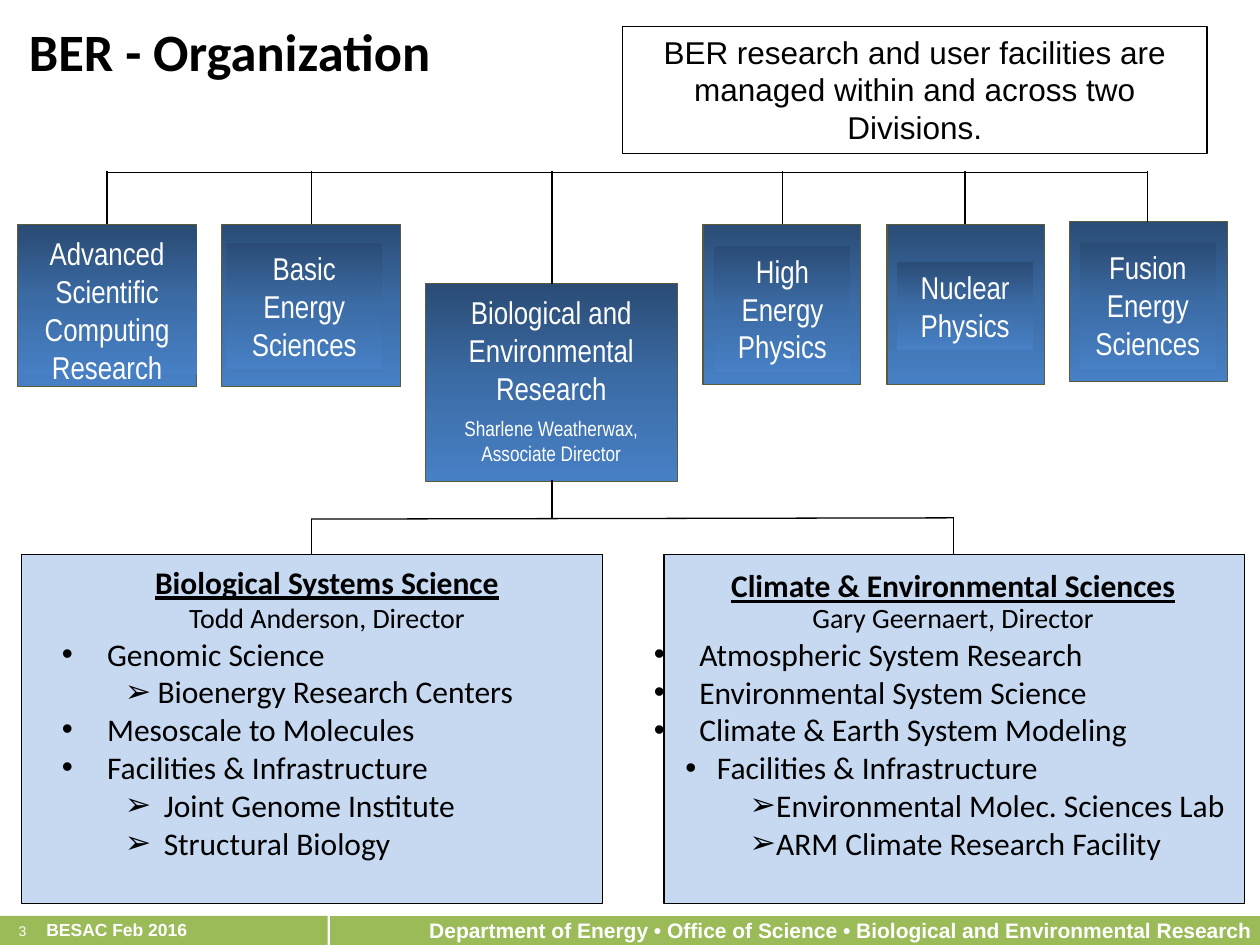
import copy

import pptx
import pptx.util
import pptx.dml.color
import pptx.enum.shapes
import pptx.enum.text
import pptx.oxml
import pptx.oxml.ns

Inches = pptx.util.Inches
Pt = pptx.util.Pt
RGBColor = pptx.dml.color.RGBColor
Align = pptx.enum.text.PP_ALIGN
Anchor = pptx.enum.text.MSO_ANCHOR
Fit = pptx.enum.text.MSO_AUTO_SIZE
qn = pptx.oxml.ns.qn

BLACK = RGBColor(0, 0, 0)
WHITE = RGBColor(255, 255, 255)
GREEN = RGBColor(0x9B, 0xBB, 0x59)
PALE = RGBColor(0xC6, 0xD9, 0xF1)
OLIVE = RGBColor(0x5A, 0x5B, 0x39)
DEEP = RGBColor(0x2A, 0x4C, 0x75)
MID = RGBColor(0x3C, 0x6C, 0xA6)
LIGHT = RGBColor(0x47, 0x80, 0xC5)
SHADE = (DEEP, MID, LIGHT)


class Chart:
    def __init__(self, slide):
        self.slide = slide
        self.thin = Pt(0.75)

    def box(self, at, fill=None, edge=None, host=None):
        shapes = (host or self.slide).shapes
        shape = shapes.add_shape(pptx.enum.shapes.MSO_SHAPE.RECTANGLE, *map(Inches, at))
        shape.shadow.inherit = False
        if fill is None:
            shape.fill.background()
        elif fill is SHADE:
            self.shade(shape)
        else:
            shape.fill.solid()
            shape.fill.fore_color.rgb = fill
        if edge is None:
            shape.line.fill.background()
        else:
            shape.line.color.rgb = edge
            shape.line.width = self.thin
        return shape

    def shade(self, shape):
        shape.fill.gradient()
        shape.fill.gradient_angle = 270
        stops = shape.element.spPr.find(qn("a:gradFill")).find(qn("a:gsLst"))
        stops.insert(1, copy.deepcopy(stops[0]))
        for stop, tint, place in zip(shape.fill.gradient_stops, SHADE, (0, 0.5, 1)):
            stop.color.rgb = tint
            stop.position = place

    def label(self, at):
        return self.slide.shapes.add_textbox(*map(Inches, at))

    def frame(self, shape, anchor=Anchor.TOP, fit=Fit.SHAPE_TO_FIT_TEXT, side=0.1):
        frame = shape.text_frame
        frame.word_wrap = True
        frame.auto_size = fit
        frame.vertical_anchor = anchor
        frame.margin_left = frame.margin_right = Inches(side)
        return frame

    def put(self, para, text, size, face, color=BLACK, align=Align.LEFT,
            bold=False, under=False, space=None):
        para.text = text
        para.alignment = align
        if space:
            para.line_spacing = space
        for run in para.runs:
            self.style(run, size, face, color, bold, under)

    def style(self, run, size, face, color, bold=False, under=False):
        font = run.font
        font.size = Pt(size)
        font.name = face
        font.color.rgb = color
        font.bold = bold
        font.underline = under

    def indent(self, para, left, hang, mark=None):
        props = para._p.get_or_add_pPr()
        props.set("marL", str(Inches(left)))
        props.set("indent", str(-Inches(hang)))
        if mark:
            space = pptx.oxml.ns.nsdecls("a")
            face = pptx.oxml.parse_xml(f'<a:buFont {space} typeface="Arial"/>')
            sign = pptx.oxml.parse_xml(f'<a:buChar {space} char="{mark}"/>')
            props.extend((face, sign))

    def line(self, x1, y1, x2, y2):
        kind = pptx.enum.shapes.MSO_CONNECTOR.STRAIGHT
        line = self.slide.shapes.add_connector(kind, *map(Inches, (x1, y1, x2, y2)))
        line.line.color.rgb = BLACK
        line.line.width = self.thin
        line.element.spPr.append(
            pptx.oxml.parse_xml(f'<a:effectLst {pptx.oxml.ns.nsdecls("a")}/>'))

    def title(self, at, text):
        shape = self.slide.shapes.title
        shape.left, shape.top, shape.width, shape.height = map(Inches, at)
        frame = self.frame(shape, fit=Fit.NONE)
        self.put(frame.paragraphs[0], text, 30, "Calibri", bold=True, space=0.9)

    def office(self, name, outer, inner):
        group = self.slide.shapes.add_group_shape()
        self.box(outer, SHADE, OLIVE, group)
        frame = self.frame(self.box(inner, SHADE, host=group))
        self.put(frame.paragraphs[0], name, 18, "Arial Narrow", WHITE, Align.CENTER)

    def branch(self, at, name, head, rows, space=None):
        frame = self.frame(self.label(at), side=0)
        self.put(frame.paragraphs[0], name, 18, "Calibri", align=Align.CENTER,
                 bold=True, under=True, space=space)
        self.put(frame.add_paragraph(), head, 16, "Calibri", align=Align.CENTER, space=space)
        for text, mark, left, hang in rows:
            para = frame.add_paragraph()
            self.indent(para, left, hang, mark)
            self.put(para, text, 18, "Calibri")

    def foot(self):
        bar = self.box((2.62, 7.27, 7.42, 0.25), GREEN)
        frame = self.frame(bar, Anchor.MIDDLE, Fit.NONE)
        self.put(frame.paragraphs[0],
                 "Department of Energy • Office of Science • "
                 "Biological and Environmental Research",
                 12, "Arial", WHITE, Align.RIGHT, bold=True, space=0.9)
        self.box((-0.01, 7.27, 2.61, 0.24), GREEN)
        frame = self.frame(self.label((0.05, 7.26, 2.62, 0.29)), fit=Fit.NONE)
        para = frame.paragraphs[0]
        self.indent(para, 0.22, 0.22)
        self.put(para, "3\t", 8, "Arial", WHITE, space=0.9)
        run = para.add_run()
        run.text = "BESAC Feb 2016"
        self.style(run, 10, "Arial", WHITE, bold=True)


def main():
    deck = pptx.Presentation()
    deck.slide_width, deck.slide_height = Inches(10), Inches(7.5)
    chart = Chart(deck.slides.add_slide(deck.slide_layouts[5]))

    chart.foot()
    chart.title((0.13, 0.16, 4.56, 0.56), "BER - Organization")
    for left in (5.27, 0.17):
        chart.box((left, 4.4, 4.61, 2.77), PALE, BLACK)

    offices = (
        ("Advanced Scientific Computing Research", (0.14, 1.78, 1.42, 1.29), (0.14, 1.81, 1.42, 1.17)),
        ("Basic Energy Sciences", (1.76, 1.78, 1.42, 1.29), (1.8, 1.93, 1.23, 1)),
        ("High Energy Physics", (5.58, 1.78, 1.25, 1.27), (5.67, 1.95, 1.08, 1)),
        ("Nuclear Physics", (7.04, 1.78, 1.25, 1.27), (7.12, 2.08, 1.08, 0.7)),
        ("Fusion Energy Sciences", (8.49, 1.76, 1.25, 1.27), (8.57, 1.92, 1.08, 1.01)),
    )
    for office in offices:
        chart.office(*office)

    chart.box((3.38, 2.25, 2, 1.57), SHADE, OLIVE)
    frame = chart.frame(chart.label((3.47, 2.28, 1.81, 1.51)))
    chart.put(frame.paragraphs[0], "Biological and Environmental Research",
              18, "Arial Narrow", WHITE, Align.CENTER)
    para = frame.add_paragraph()
    chart.put(para, "Sharlene Weatherwax, Associate Director",
              12, "Arial Narrow", WHITE, Align.CENTER)
    para.space_before = Pt(5)

    main_row = ("•", 0.36, 0.36)
    first = ("➢", 0.76, 0.26)
    sub = ("➢", 0.81, 0.31)
    inner = ("➢", 0.97, 0.21)
    chart.branch((0.49, 4.42, 4.21, 2.49), "Biological Systems Science", "Todd Anderson, Director", (
        ("Genomic Science", *main_row),
        ("Bioenergy Research Centers", *first),
        ("Mesoscale to Molecules", *main_row),
        ("Facilities & Infrastructure", *main_row),
        ("Joint Genome Institute", *sub),
        ("Structural Biology", *sub),
    ))
    chart.branch((5.19, 4.48, 4.75, 2.43), "Climate & Environmental Sciences", "Gary Geernaert, Director", (
        ("Atmospheric System Research", *main_row),
        ("Environmental System Science", *main_row),
        ("Climate & Earth System Modeling", *main_row),
        ("Facilities & Infrastructure", "•", 0.5, 0.25),
        ("Environmental Molec. Sciences Lab", *inner),
        ("ARM Climate Research Facility", *inner),
    ), space=0.9)

    chart.line(0.85, 1.37, 9.11, 1.37)
    drops = ((0.85, 1.78), (2.47, 1.78), (4.38, 2.25), (6.21, 1.78), (7.66, 1.78), (9.11, 1.76))
    for x, end in drops:
        chart.line(x, 1.36, x, end)
    chart.line(4.38, 3.81, 4.38, 4.11)
    chart.line(2.47, 4.12, 7.57, 4.11)
    for x, top in ((2.47, 4.12), (7.57, 4.11)):
        chart.line(x, top, x, 4.4)

    frame = chart.frame(chart.box((4.94, 0.21, 4.64, 1.01), edge=BLACK))
    chart.put(frame.paragraphs[0],
              "BER research and user facilities are managed within and across two Divisions.",
              18, "Arial", align=Align.CENTER)

    deck.save("out.pptx")


if __name__ == "__main__":
    main()
